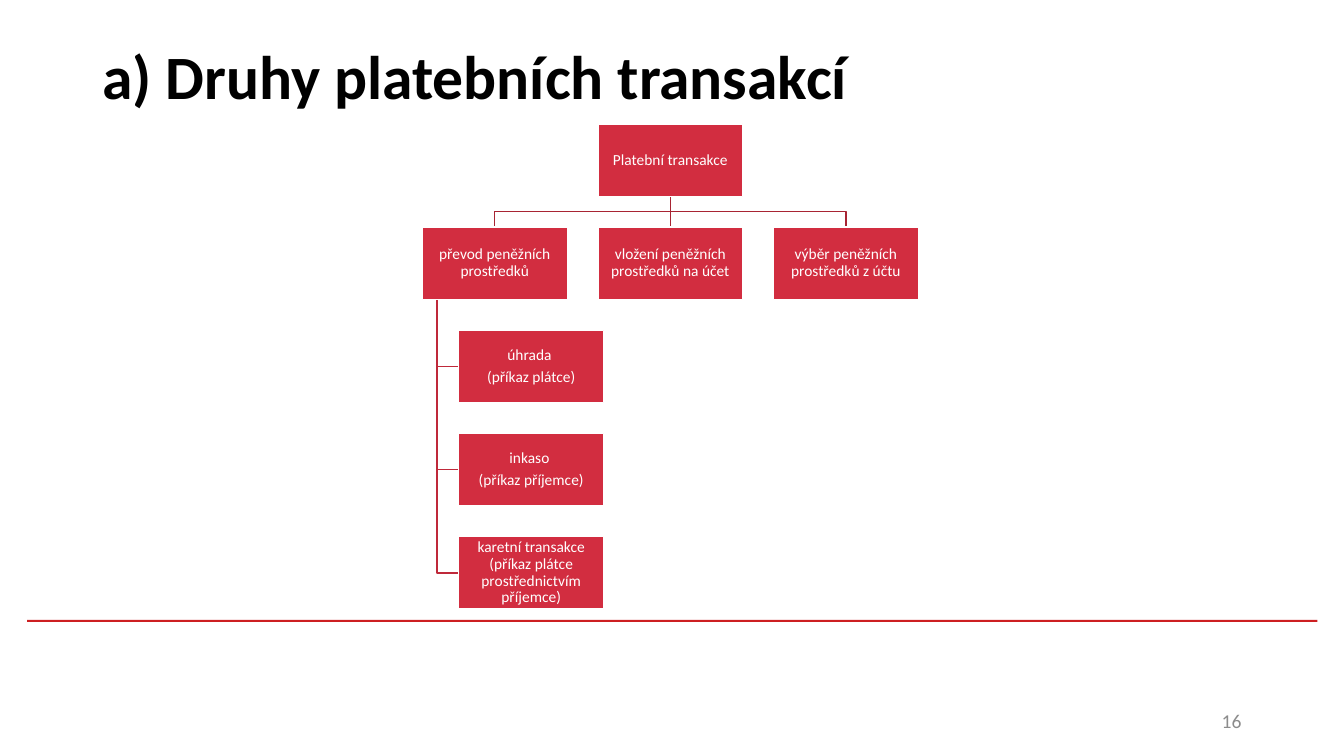
from pptx import Presentation
from pptx.dml.color import RGBColor
from pptx.enum.shapes import MSO_CONNECTOR as LINK, MSO_SHAPE as SHAPE
from pptx.enum.text import MSO_ANCHOR as ANCHOR, PP_ALIGN as ALIGN
from pptx.oxml.ns import qn
from pptx.util import Pt
from lxml.etree import SubElement

BLACK = RGBColor(0x00, 0x00, 0x00)
WHITE = RGBColor(0xFF, 0xFF, 0xFF)
GREY = RGBColor(0x8C, 0x8C, 0x8C)
RED = RGBColor(0xD2, 0x2D, 0x40)
DARK = RGBColor(0xA8, 0x24, 0x33)
MID = RGBColor(0xBF, 0x29, 0x3A)
RULE = RGBColor(0xCD, 0x1F, 0x21)

BOX_W, BOX_H = 103.5, 51.75
LEFT, TOP = 301.7, 88.5
COL, ROW = 125.4, 73.7
INDENT = 26
STEM = LEFT + BOX_W / 10

TYPES = ["převod peněžních prostředků", "vložení peněžních prostředků na účet",
         "výběr peněžních prostředků z účtu"]
ORDERS = ["úhrada \n(příkaz plátce)", "inkaso \n(příkaz příjemce)",
          "karetní transakce (příkaz plátce prostřednictvím příjemce)"]


class Board:
    font = "Calibri"

    def __init__(self, slide):
        self.shapes = slide.shapes

    def fill_text(self, shape, text, size, color, align, bold=False):
        frame = shape.text_frame
        frame.word_wrap = True
        frame.vertical_anchor = ANCHOR.MIDDLE
        frame.text = text
        for par in frame.paragraphs:
            par.alignment = align
            for run in par.runs:
                run.font.name = self.font
                run.font.size = Pt(size)
                run.font.bold = bold
                run.font.color.rgb = color
        return frame

    def label(self, x, y, w, h, text, *style):
        area = self.shapes.add_textbox(Pt(x), Pt(y), Pt(w), Pt(h))
        self.fill_text(area, text, *style)

    def rect(self, x, y, w, h, fill):
        shape = self.shapes.add_shape(SHAPE.RECTANGLE, Pt(x), Pt(y), Pt(w), Pt(h))
        shape.shadow.inherit = False
        shape.fill.solid()
        shape.fill.fore_color.rgb = fill
        shape.line.fill.background()
        return shape

    def box(self, x, y, text):
        shape = self.rect(x, y, BOX_W, BOX_H, RED)
        shape.line.color.rgb = WHITE
        shape.line.width = Pt(1)
        frame = self.fill_text(shape, text, 11, WHITE, ALIGN.CENTER)
        frame.margin_left = frame.margin_right = Pt(0.7)
        frame.margin_top = frame.margin_bottom = Pt(0.7)
        for i, par in enumerate(frame.paragraphs):
            par.line_spacing = 0.9
            par.space_before = Pt(4 if i else 0)
        return shape

    def bend(self, color, *spots):
        """Draw an open line through the given points."""
        start, *rest = [(Pt(x), Pt(y)) for x, y in spots]
        pen = self.shapes.build_freeform(*start)
        pen.add_line_segments(rest, close=False)
        shape = pen.convert_to_shape()
        shape.shadow.inherit = False
        shape.fill.background()
        shape.line.color.rgb = color
        shape.line.width = Pt(1)

    def link(self, x1, y1, x2, y2, color):
        line = self.shapes.add_connector(LINK.STRAIGHT, Pt(x1), Pt(y1), Pt(x2), Pt(y2))
        line.line.color.rgb = color
        line.line.width = Pt(1)
        SubElement(line._element.spPr, qn("a:effectLst"))
        return line


def draw_tree(board):
    mid = LEFT + COL + BOX_W / 2
    foot, head = TOP + BOX_H, TOP + ROW
    turn = (foot + head) / 2
    for side in (1, -1):
        end = mid + side * COL
        board.bend(DARK, (mid, foot), (mid, turn), (end, turn), (end, head))
    trunk = board.link(mid, foot, mid, head, DARK)

    tops = [TOP + ROW * (i + 2) for i in range(len(ORDERS))]
    for top in reversed(tops):
        level = top + BOX_H / 2
        board.bend(MID, (STEM, head + BOX_H), (STEM, level), (LEFT + INDENT, level))

    root = board.box(LEFT + COL, TOP, "Platební transakce")
    kinds = [board.box(LEFT + COL * i, head, text) for i, text in enumerate(TYPES)]
    for top, text in zip(tops, ORDERS):
        board.box(LEFT + INDENT, top, text)
    trunk.begin_connect(root, 2)
    trunk.end_connect(kinds[1], 0)


def main():
    deck = Presentation()
    deck.slide_width, deck.slide_height = Pt(960), Pt(540)
    board = Board(deck.slides.add_slide(deck.slide_layouts[6]))
    board.rect(19.4, 442.8, 921.6, 1.5, RULE)
    board.label(66, 1.5, 828, 104.4, "a) Druhy platebních transakcí",
                44, BLACK, ALIGN.LEFT, True)
    board.label(678, 500.5, 216, 28.75, "16", 14, GREY, ALIGN.RIGHT)
    draw_tree(board)
    deck.save("out.pptx")


if __name__ == "__main__":
    main()
